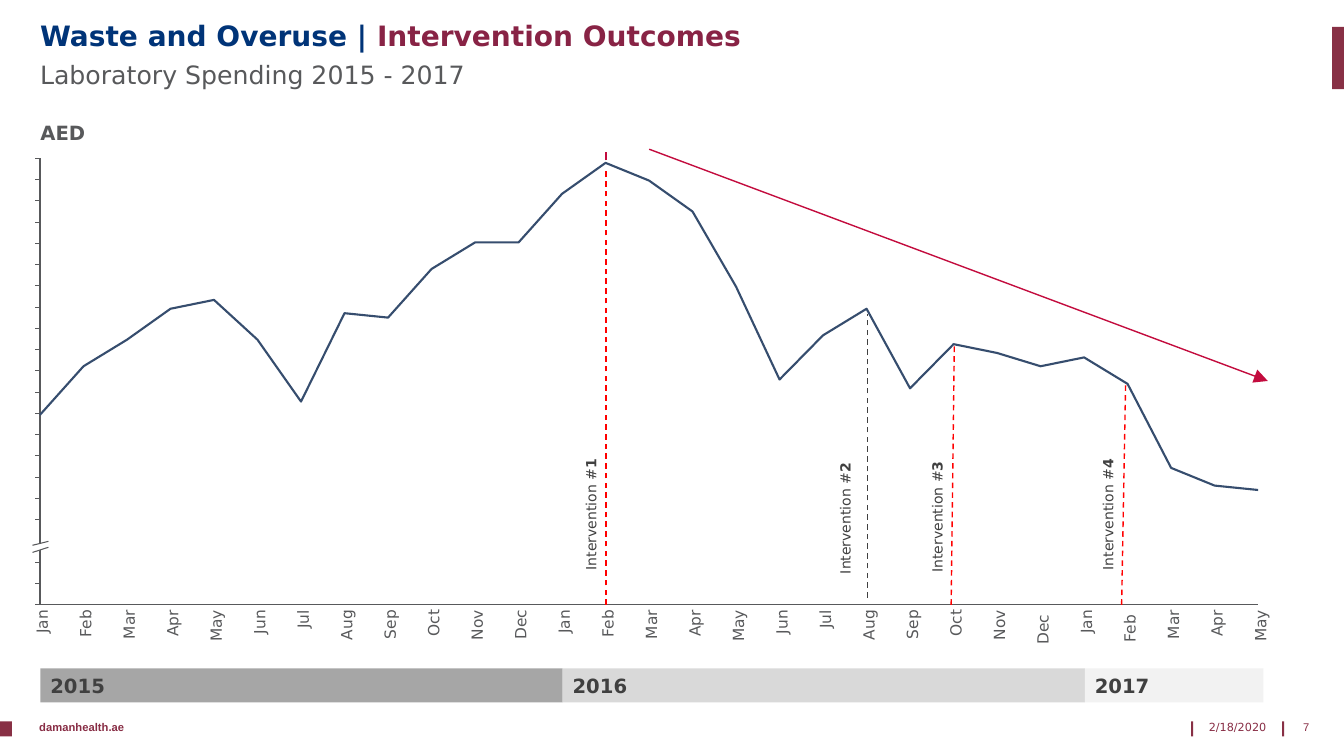
from lxml import etree
from pptx import Presentation
from pptx.chart.data import CategoryChartData
from pptx.dml.color import RGBColor
from pptx.enum.chart import XL_CHART_TYPE, XL_MARKER_STYLE, XL_TICK_LABEL_POSITION, XL_TICK_MARK
from pptx.enum.dml import MSO_LINE
from pptx.enum.shapes import MSO_CONNECTOR, MSO_SHAPE
from pptx.enum.text import MSO_ANCHOR, PP_ALIGN
from pptx.oxml import parse_xml
from pptx.oxml.ns import nsdecls, qn
from pptx.util import Cm, Pt

LINE = XL_CHART_TYPE.LINE
BARE = XL_MARKER_STYLE.NONE
BLANK = XL_TICK_LABEL_POSITION.NONE
NO_TICK = XL_TICK_MARK.NONE
DASH = MSO_LINE.DASH
STRAIGHT = MSO_CONNECTOR.STRAIGHT
RECT = MSO_SHAPE.RECTANGLE
TOP, MID, BASE = MSO_ANCHOR.TOP, MSO_ANCHOR.MIDDLE, MSO_ANCHOR.BOTTOM
LEFT, CENTER, RIGHT = PP_ALIGN.LEFT, PP_ALIGN.CENTER, PP_ALIGN.RIGHT

FONT = "DejaVu Sans"
GREY, DARK, WINE, RED = "58595B", "404040", "883045", "C30C3E"
YEAR = 13.16
STEP = YEAR / 12
MONTHS = ["Jan", "Feb", "Mar", "Apr", "May", "Jun",
          "Jul", "Aug", "Sep", "Oct", "Nov", "Dec"]
SPEND = [43, 54, 60, 67, 69, 60, 46, 66, 65, 76, 82, 82, 93, 100, 96,
         89, 72, 51, 61, 67, 49, 59, 57, 54, 56, 50, 31, 27, 26]
TICKS, GAP = 22, 18
GUIDES = [(13, 0.23, 0, 11.25, 0, -0.38, 8.93, "FF0000"),
          (19, 3.93, 0, 11.07, 0, -0.55, 9.03, DARK),
          (21, 4.67, 0, 11.25, -0.08, -0.43, 8.99, "FF0000"),
          (25, 5.69, -0.07, 11.25, -0.17, -0.51, 8.93, "FF0000")]


def color(code):
    return RGBColor.from_string(code)


def write(shape, runs, size=10, ink=GREY, bold=False, font=FONT, align=LEFT,
          anchor=TOP, wrap=True, inset=None, spacing=None, turn=None):
    frame = shape.text_frame
    frame.word_wrap = wrap
    frame.vertical_anchor = anchor
    if inset is not None:
        frame.margin_left = frame.margin_right = Cm(inset)
        frame.margin_top = frame.margin_bottom = Cm(inset)
    if turn:
        frame._txBody.bodyPr.set("vert", turn)
    para = frame.paragraphs[0]
    para.alignment = align
    if spacing:
        para.line_spacing = spacing
    for words, change in [(runs, {})] if isinstance(runs, str) else runs:
        run = para.add_run()
        run.text = words
        run.font.name = font
        run.font.size = Pt(size)
        run.font.bold = change.get("bold", bold)
        run.font.color.rgb = color(change.get("ink", ink))


def text(slide, box, runs, **form):
    shape = slide.shapes.add_textbox(*map(Cm, box))
    write(shape, runs, **form)
    return shape


def block(slide, box, fill):
    shape = slide.shapes.add_shape(RECT, *map(Cm, box))
    shape.shadow.inherit = False
    shape.fill.solid()
    shape.fill.fore_color.rgb = color(fill)
    shape.line.fill.background()
    return shape


def rule(slide, start, end, ink=GREY, width=0.75, dash=None, head=False):
    line = slide.shapes.add_connector(STRAIGHT, *map(Cm, start + end))
    line.line.color.rgb = color(ink)
    line.line.width = Pt(width)
    if dash:
        line.line.dash_style = dash
    if head:
        tip = etree.SubElement(line.line._get_or_add_ln(), qn("a:tailEnd"))
        for key, val in (("type", "triangle"), ("w", "lg"), ("len", "lg")):
            tip.set(key, val)
    line._element.spPr.append(parse_xml(f"<a:effectLst {nsdecls('a')}/>"))


def header(slide, box):
    x, y, w, h = box
    text(slide, (x, y, w, 1.02),
         [("Waste and Overuse | ", {}), ("Intervention Outcomes", {"ink": "882345"})],
         size=20, ink="003478", bold=True, spacing=0.9)
    text(slide, (x, y + h - 0.76, w, 0.76), "Laboratory Spending 2015 - 2017",
         size=18, anchor=MID, spacing=0.9)
    block(slide, (33.57, y + 0.25, 0.3, 1.57), WINE)


def graph(slide, box):
    data = CategoryChartData()
    data.categories = [str(n + 1) for n in range(len(SPEND))]
    data.add_series("Series 1", SPEND)
    chart = slide.shapes.add_chart(LINE, *map(Cm, box), data).chart
    chart.has_legend = chart.has_title = False
    chart.font.name = FONT
    chart.font.size = Pt(10)
    chart.font.color.rgb = color(GREY)
    cats, vals = chart.category_axis, chart.value_axis
    for axis in (cats, vals):
        axis.has_major_gridlines = False
        axis.tick_label_position = BLANK
        axis.major_tick_mark = axis.minor_tick_mark = NO_TICK
        axis.format.line.color.rgb = color(GREY)
        axis.format.line.width = Pt(0.75)
    vals.minimum_scale, vals.maximum_scale, vals.major_unit = 0, 101, 5
    vals._element.find(qn("c:majorUnit")).addprevious(
        parse_xml(f'<c:crossBetween {nsdecls("c")} val="midCat"/>'))
    plot = chart.plots[0]
    plot.vary_by_categories = False
    line = plot.series[0]
    line.smooth = False
    line.marker.style = BARE
    line.format.line.color.rgb = color("364D6E")
    line.format.line.width = Pt(1.5)
    area = chart._chartSpace.chart.plotArea
    for old in area.findall(qn("c:layout")):
        area.remove(old)
    sizes = (("x", 0.007), ("y", 0.02), ("w", 0.985), ("h", 0.961))
    inner = "".join(f'<c:{key}Mode val="edge"/>' for key in "xy")
    inner += "".join(f'<c:{key} val="{val}"/>' for key, val in sizes)
    area.insert(0, parse_xml(
        f'<c:layout {nsdecls("c")}><c:manualLayout>'
        f'<c:layoutTarget val="inner"/>{inner}</c:manualLayout></c:layout>'))


def gap(slide, x, y):
    ends = [(x - 0.2, y + 0.1), (x + 0.2, y),
            (x + 0.2, y + 0.15), (x - 0.2, y + 0.28)]
    spots = [tuple(map(Cm, spot)) for spot in ends]
    form = slide.shapes.build_freeform(*spots[0])
    form.add_line_segments(spots[1:], close=True)
    mask = form.convert_to_shape()
    mask.shadow.inherit = False
    mask.fill.solid()
    mask.fill.fore_color.rgb = color("FFFFFF")
    mask.line.fill.background()
    rule(slide, ends[0], ends[1])
    rule(slide, ends[3], ends[2])


def trend(slide, box):
    x, y, w, h = box
    text(slide, (x, y - 0.92, 1.14, 0.58), "AED", size=14, bold=True,
         anchor=BASE, wrap=False, inset=0)
    for n in range(TICKS):
        if n != GAP:
            level = y + n * h / (TICKS - 1)
            rule(slide, (x - 0.13, level), (x, level))
    graph(slide, (x - 0.23, y - 0.23, w + 0.46, h + 0.46))
    gap(slide, x, y + 9.65)
    rule(slide, (x + 15.34, y - 0.23), (x + 30.93, y + 5.61), RED, 1, head=True)
    rule(slide, (x + 13 * STEP, y + 0.05), (x + 13 * STEP, y - 0.15), RED, 1)
    for n in range(len(SPEND)):
        name = MONTHS[n % 12] + (" " if n in (23, 25) else "")
        text(slide, (x + n * STEP - 0.2, y + h + 0.13, 0.46, 0.9), name, size=11,
             align=RIGHT, anchor=MID, inset=0, turn="vert270")
    for n, guide in enumerate(GUIDES, 1):
        month, top, lean, foot, shift, side, mid, ink = guide
        at = x + month * STEP
        rule(slide, (at + shift, y + foot), (at + lean, y + top), ink, 1, DASH)
        label = text(slide, (at + side - 1.69, y + mid - 0.34, 3.38, 0.69),
                     [("Intervention #", {}), (str(n), {"bold": True})],
                     ink=DARK, wrap=False)
        label.rotation = 270


def years(slide, box):
    x, y, w, h = box
    bars = (("2015", "A6A6A6"), ("2016", "D9D9D9"), ("2017", "F2F2F2"))
    for n, (name, fill) in enumerate(bars):
        left = n * YEAR
        bar = block(slide, (x + left, y, min(YEAR, w - left), h), fill)
        write(bar, name, size=14, ink=DARK, bold=True, anchor=MID)


def footer(slide, box):
    x, y, w, h = box
    block(slide, (x, y + 0.15, 0.3, 0.38), WINE)
    text(slide, (x + 0.74, y, 2.67, h), "damanhealth.ae", size=8,
         ink="882D45", bold=True, font="Arial", wrap=False)
    for left in (30.02, 32.31):
        block(slide, (x + left, y + 0.15, 0.05, 0.38), WINE)
    text(slide, (x + 30.07, y, 2.24, h), "2/18/2020", size=8, ink="882D45",
         align=CENTER, anchor=MID)
    text(slide, (x + w - 1.51, y, 0.89, h), "7", size=8, ink="882D45",
         font="Arial", align=RIGHT, anchor=MID)


def main():
    deck = Presentation()
    deck.slide_width, deck.slide_height = Cm(33.87), Cm(19.05)
    slide = deck.slides.add_slide(deck.slide_layouts[6])
    header(slide, (0.76, 0.43, 28.96, 1.88))
    trend(slide, (1.02, 3.99, 28 * STEP, 11.25))
    years(slide, (1.02, 16.84, 30.82, 0.86))
    footer(slide, (0, 18.03, 33.87, 0.6))
    deck.save("out.pptx")


if __name__ == "__main__":
    main()
